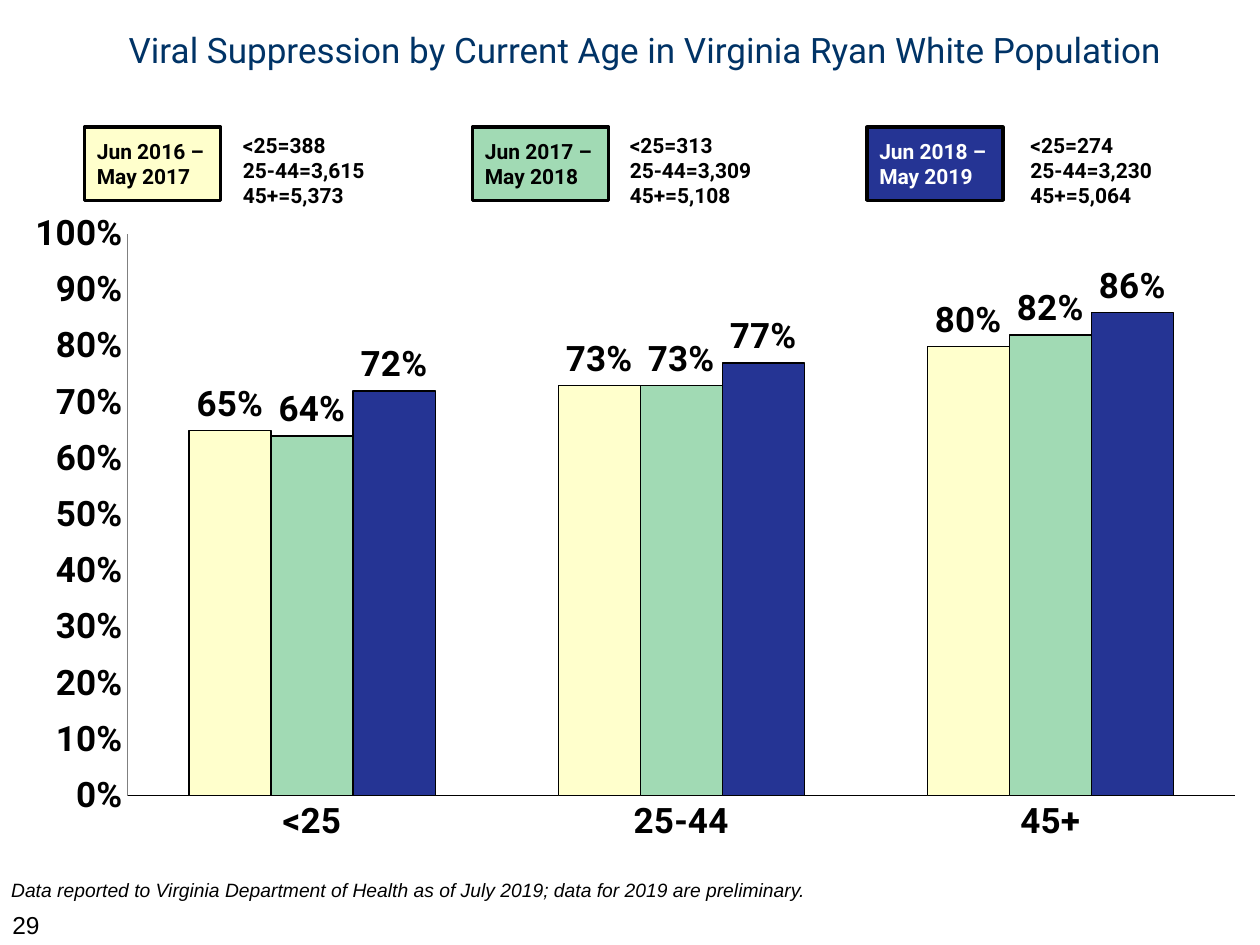
from lxml import etree
from pptx import Presentation
from pptx.chart.data import CategoryChartData
from pptx.dml.color import RGBColor
from pptx.enum.chart import XL_CHART_TYPE, XL_LABEL_POSITION, XL_TICK_MARK
from pptx.enum.shapes import MSO_SHAPE
from pptx.enum.text import MSO_ANCHOR, PP_ALIGN
from pptx.oxml.ns import qn
from pptx.util import Inches, Pt

AGES = ["<25", "25-44", "45+"]
# period, fill, text colour, counts, rates, key left, counts left, counts width
PERIODS = [
    ("Jun 2016 – May 2017", "FFFFCC", "000000",
     ["388", "3,615", "5,373"], [0.65, 0.73, 0.80], 0.67, 1.83, 1.34),
    ("Jun 2017 – May 2018", "A1DAB4", "000000",
     ["313", "3,309", "5,108"], [0.64, 0.73, 0.82], 3.75, 4.90, 1.77),
    ("Jun 2018 – May 2019", "253494", "FFFFFF",
     ["274", "3,230", "5,064"], [0.72, 0.77, 0.86], 6.88, 8.08, 1.92),
]


def colour(hex_code):
    return RGBColor.from_string(hex_code)


def inches(box):
    return [Inches(length) for length in box]


def set_font(font, size, name="Roboto", hex_code="000000", bold=False, italic=False):
    font.size, font.name, font.bold, font.italic = Pt(size), name, bold, italic
    font.color.rgb = colour(hex_code)


def set_line(line, hex_code, width):
    line.color.rgb = colour(hex_code)
    line.width = Pt(width)


def write(shape, lines, align=PP_ALIGN.LEFT, anchor=MSO_ANCHOR.TOP, **font):
    frame = shape.text_frame
    frame.word_wrap = True
    frame.vertical_anchor = anchor
    for index, line in enumerate(lines):
        para = frame.add_paragraph() if index else frame.paragraphs[0]
        para.alignment = align
        span = para.add_run()
        span.text = line
        set_font(span.font, **font)


def add_text(page, box, lines, **style):
    write(page.shapes.add_textbox(*inches(box)), lines, **style)


def add_title(page, box, text):
    title = page.shapes.title
    title.left, title.top, title.width, title.height = inches(box)
    write(title, [text], align=PP_ALIGN.CENTER, anchor=MSO_ANCHOR.MIDDLE,
          size=20, hex_code="003366")


def add_key(page, box, period, fill, text_colour):
    key = page.shapes.add_shape(MSO_SHAPE.RECTANGLE, *inches(box))
    key.shadow.inherit = False
    key.fill.solid()
    key.fill.fore_color.rgb = colour(fill)
    set_line(key.line, "000000", 2)
    write(key, [period], anchor=MSO_ANCHOR.MIDDLE, size=12, bold=True,
          hex_code=text_colour)


def set_plot_area(chart, **fractions):
    """Fix the inner plot area as fractions of the chart frame."""
    plot_area = chart.plots[0]._element.getparent()
    for old in plot_area.findall(qn("c:layout")):
        plot_area.remove(old)
    layout = etree.Element(qn("c:layout"))
    plot_area.insert(0, layout)
    manual = etree.SubElement(layout, qn("c:manualLayout"))
    settings = {"layoutTarget": "inner", "xMode": "edge", "yMode": "edge", **fractions}
    for tag, value in settings.items():
        etree.SubElement(manual, qn(f"c:{tag}")).set("val", str(value))


def add_rate_chart(page, box):
    data = CategoryChartData(number_format="0%")
    data.categories = AGES
    for period, _, _, _, rates, *_ in PERIODS:
        data.add_series(period, rates)
    chart = page.shapes.add_chart(
        XL_CHART_TYPE.COLUMN_CLUSTERED, *inches(box), data).chart
    chart.has_legend = False
    chart.has_title = False
    set_font(chart.font, 20, bold=True)
    set_plot_area(chart, x=0.094, y=0.051, w=0.886, h=0.856)

    for axis, hex_code, width in ((chart.category_axis, "000000", 0.75),
                                  (chart.value_axis, "808080", 0.5)):
        axis.has_major_gridlines = False
        axis.major_tick_mark = axis.minor_tick_mark = XL_TICK_MARK.NONE
        set_line(axis.format.line, hex_code, width)
    scale = chart.value_axis
    scale.minimum_scale, scale.maximum_scale, scale.major_unit = 0, 1, 0.1
    scale.tick_labels.number_format = "0%"
    scale.tick_labels.number_format_is_linked = False

    plot = chart.plots[0]
    plot.gap_width, plot.overlap = 150, 0
    plot.vary_by_categories = False
    plot.has_data_labels = True
    labels = plot.data_labels
    labels.show_value = True
    labels.number_format, labels.number_format_is_linked = "0%", False
    labels.position = XL_LABEL_POSITION.OUTSIDE_END
    set_font(labels.font, 20, bold=True)
    for series, (_, fill, *_) in zip(plot.series, PERIODS):
        series.format.fill.solid()
        series.format.fill.fore_color.rgb = colour(fill)
        set_line(series.format.line, "000000", 0.75)


def main():
    deck = Presentation()
    deck.slide_width, deck.slide_height = Inches(10), Inches(7.5)
    page = deck.slides.add_slide(deck.slide_layouts[5])
    add_title(page, (-0.17, -0.05, 10.58, 0.88),
              "Viral Suppression by Current Age in Virginia Ryan White Population")
    add_rate_chart(page, (0.08, 1.59, 9.92, 5.21))
    for period, fill, text_colour, counts, _, key_left, left, width in PERIODS:
        add_key(page, (key_left, 1.01, 1.08, 0.58), period, fill, text_colour)
        add_text(page, (left, 1, width, 0.71),
                 [f"{age}={count}" for age, count in zip(AGES, counts)],
                 size=12, bold=True)
    add_text(page, (-0.01, 6.92, 9.33, 0.29),
             ["Data reported to Virginia Department of Health as of July 2019; "
              "data for 2019 are preliminary."],
             size=11, name="Arial", italic=True)
    add_text(page, (0, 7.17, 2.33, 0.25), ["29"], size=14, name="Arial")
    deck.save("out.pptx")


if __name__ == "__main__":
    main()
